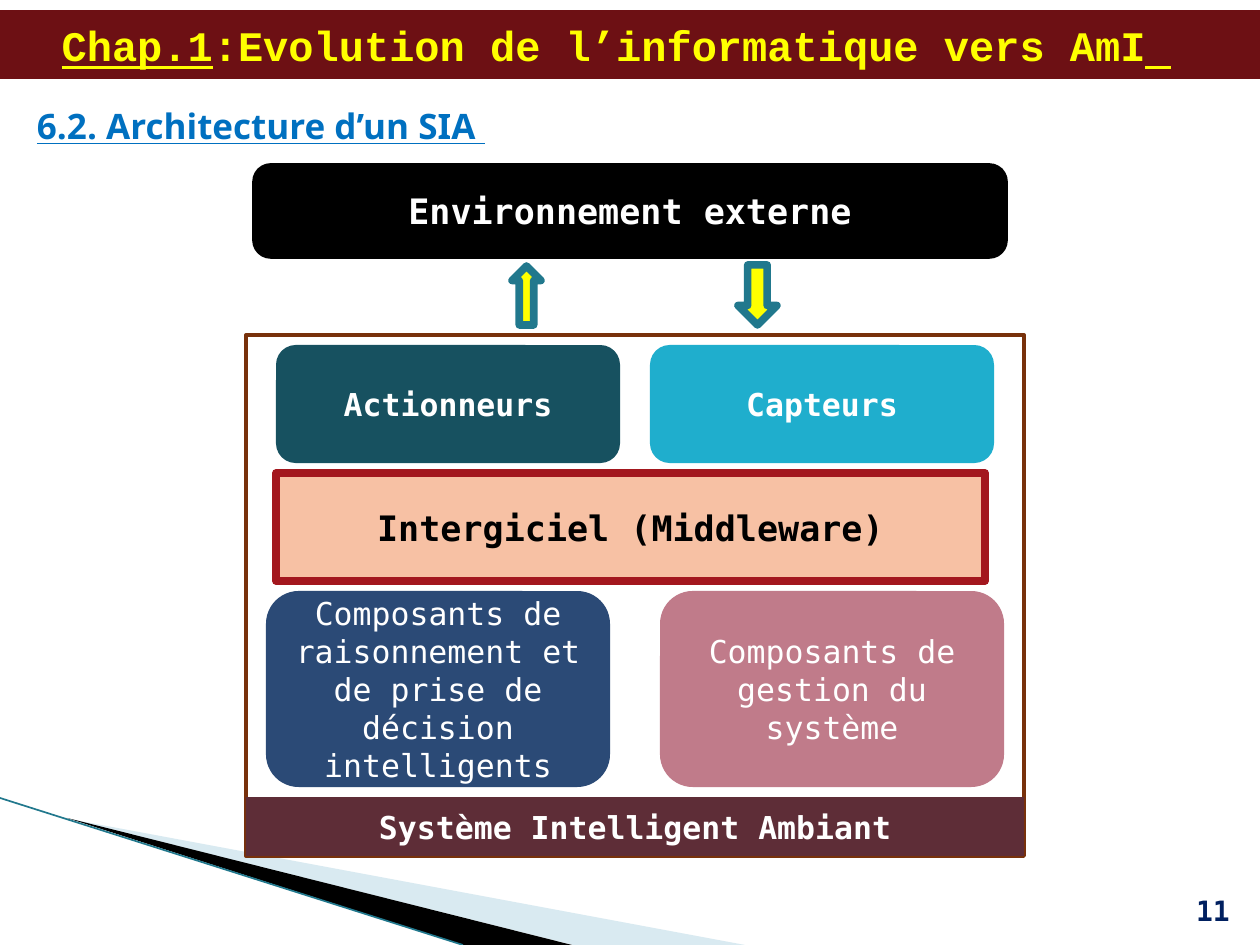
from lxml import etree
from pptx import Presentation
from pptx.dml.color import RGBColor
from pptx.enum.shapes import MSO_CONNECTOR, MSO_SHAPE
from pptx.enum.text import MSO_ANCHOR, MSO_AUTO_SIZE, PP_ALIGN
from pptx.oxml.ns import qn
from pptx.util import Pt

RECT = MSO_SHAPE.RECTANGLE
ROUNDED = MSO_SHAPE.ROUNDED_RECTANGLE
UP, DOWN = MSO_SHAPE.UP_ARROW, MSO_SHAPE.DOWN_ARROW
STRAIGHT = MSO_CONNECTOR.STRAIGHT
LEFT, CENTER, RIGHT = PP_ALIGN.LEFT, PP_ALIGN.CENTER, PP_ALIGN.RIGHT
MIDDLE, TOP, BOTTOM = MSO_ANCHOR.MIDDLE, MSO_ANCHOR.TOP, MSO_ANCHOR.BOTTOM
NO_FIT = MSO_AUTO_SIZE.NONE

EMU_PER_PX = 914400 / 126
MONO = "DejaVu Sans Mono"
WHITE, BLACK, YELLOW, TEAL = "FFFFFF", "000000", "FFFF00", "21788D"
THICK = 4.33


def px(length):
    return round(length * EMU_PER_PX)


def box(*lengths):
    return [px(length) for length in lengths]


def rgb(value):
    return RGBColor.from_string(value)


def style_run(run, size, color, font=MONO, bold=True, underline=False):
    run.font.size = Pt(size)
    run.font.name = font
    run.font.bold = bold
    run.font.underline = underline
    run.font.color.rgb = rgb(color)


def paint(shape, fill=None, line=None, width=0):
    shape.shadow.inherit = False
    if fill:
        shape.fill.solid()
        shape.fill.fore_color.rgb = rgb(fill)
    else:
        shape.fill.background()
    if line:
        shape.line.color.rgb = rgb(line)
        shape.line.width = Pt(width)
    else:
        shape.line.fill.background()


def write(shape, text, size, color, align=CENTER, anchor=MIDDLE, **style):
    frame = shape.text_frame
    frame.word_wrap = True
    frame.vertical_anchor = anchor
    frame.text = text
    paragraph = frame.paragraphs[0]
    paragraph.alignment = align
    style_run(paragraph.runs[0], size, color, **style)


def add_block(slide, kind, place, fill=None, line=None, width=0):
    block = slide.shapes.add_shape(kind, *box(*place))
    paint(block, fill, line, width)
    return block


def add_label(slide, place, text, size, color, **style):
    label = slide.shapes.add_textbox(*box(*place))
    label.text_frame.margin_left = px(8)
    write(label, text, size, color, **style)


def add_ribbon(slide, points, fill, opacity=100):
    builder = slide.shapes.build_freeform(*points[0], scale=EMU_PER_PX)
    builder.add_line_segments(points[1:], close=True)
    ribbon = builder.convert_to_shape()
    paint(ribbon, fill)
    if opacity < 100:
        color = ribbon.fill._xPr.find(".//" + qn("a:srgbClr"))
        etree.SubElement(color, qn("a:alpha"), val=str(opacity * 1000))


def add_line(slide, start, end, color, width):
    line = slide.shapes.add_connector(STRAIGHT, *box(*start, *end))
    line.line.color.rgb = rgb(color)
    line.line.width = Pt(width)
    etree.SubElement(line._element.spPr, qn("a:effectLst"))


def add_title(slide):
    title = slide.shapes.title
    title.left, title.top, title.width, title.height = box(0, 10, 1260, 69)
    title.fill.solid()
    title.fill.fore_color.rgb = rgb("6D1014")
    frame = title.text_frame
    frame.auto_size = NO_FIT
    frame.vertical_anchor = MIDDLE
    paragraph = frame.paragraphs[0]
    paragraph.alignment = LEFT
    indent = paragraph._p.get_or_add_pPr()
    indent.set("marL", str(px(49)))
    indent.set("indent", "0")
    parts = [("Chap.1", True), (":Evolution de l’informatique vers AmI", False), (" ", True)]
    for text, underline in parts:
        run = paragraph.add_run()
        run.text = text
        style_run(run, 24, YELLOW, font="Courier New", underline=underline)


def add_architecture(slide):
    # Ambient system frame
    add_block(slide, RECT, (246, 335, 778, 521), line="78310B", width=2.25)

    # Exchanges with the environment
    add_block(slide, UP, (512, 266, 29, 59), YELLOW, TEAL, THICK)
    add_block(slide, DOWN, (738, 265, 39, 60), YELLOW, TEAL, THICK)

    # Layers: kind, place, fill, outline, text, size, text colour, bold
    layers = [
        (ROUNDED, (256, 167, 748, 88), BLACK, BLACK, "Environnement externe", 20, WHITE, True),
        (RECT, (246, 797, 778, 59), "5E2D37", None, "Système Intelligent Ambiant", 18, WHITE, True),
        (ROUNDED, (266, 591, 344, 196), "2B4A76", None,
         "Composants de raisonnement et de prise de décision intelligents", 18, WHITE, False),
        (ROUNDED, (660, 591, 344, 196), "C07B8A", None,
         "Composants de gestion du système", 18, WHITE, False),
        (RECT, (276, 473, 709, 108), "F7C1A4", "A3171E", "Intergiciel (Middleware)", 20, BLACK, True),
        (ROUNDED, (650, 345, 344, 118), "1FAECD", None, "Capteurs", 18, WHITE, True),
        (ROUNDED, (276, 345, 344, 118), "175160", None, "Actionneurs", 18, WHITE, True),
    ]
    for kind, place, fill, outline, text, size, color, bold in layers:
        layer = add_block(slide, kind, place, fill, outline, THICK)
        write(layer, text, size, color, bold=bold)


def main():
    deck = Presentation()
    deck.slide_width, deck.slide_height = box(1260, 945)
    slide = deck.slides.add_slide(deck.slide_layouts[5])

    # Corner decoration
    add_ribbon(slide, [(69, 819), (745, 945), (573, 945)], "A0CBDC", opacity=40)
    add_ribbon(slide, [(67, 818), (572, 945), (463, 945)], BLACK)
    add_line(slide, (0, 798), (463, 945), TEAL, 0.95)

    # Headings and page number
    add_title(slide)
    add_label(slide, (29, 98, 945, 55), "6.2. Architecture d’un SIA ", 20, "0070C0",
              align=LEFT, anchor=TOP, font="Noto Sans", underline=True)
    add_label(slide, (1182, 883, 60, 50), "11", 16, "002060", align=RIGHT, anchor=BOTTOM)

    add_architecture(slide)
    deck.save("out.pptx")


if __name__ == "__main__":
    main()
